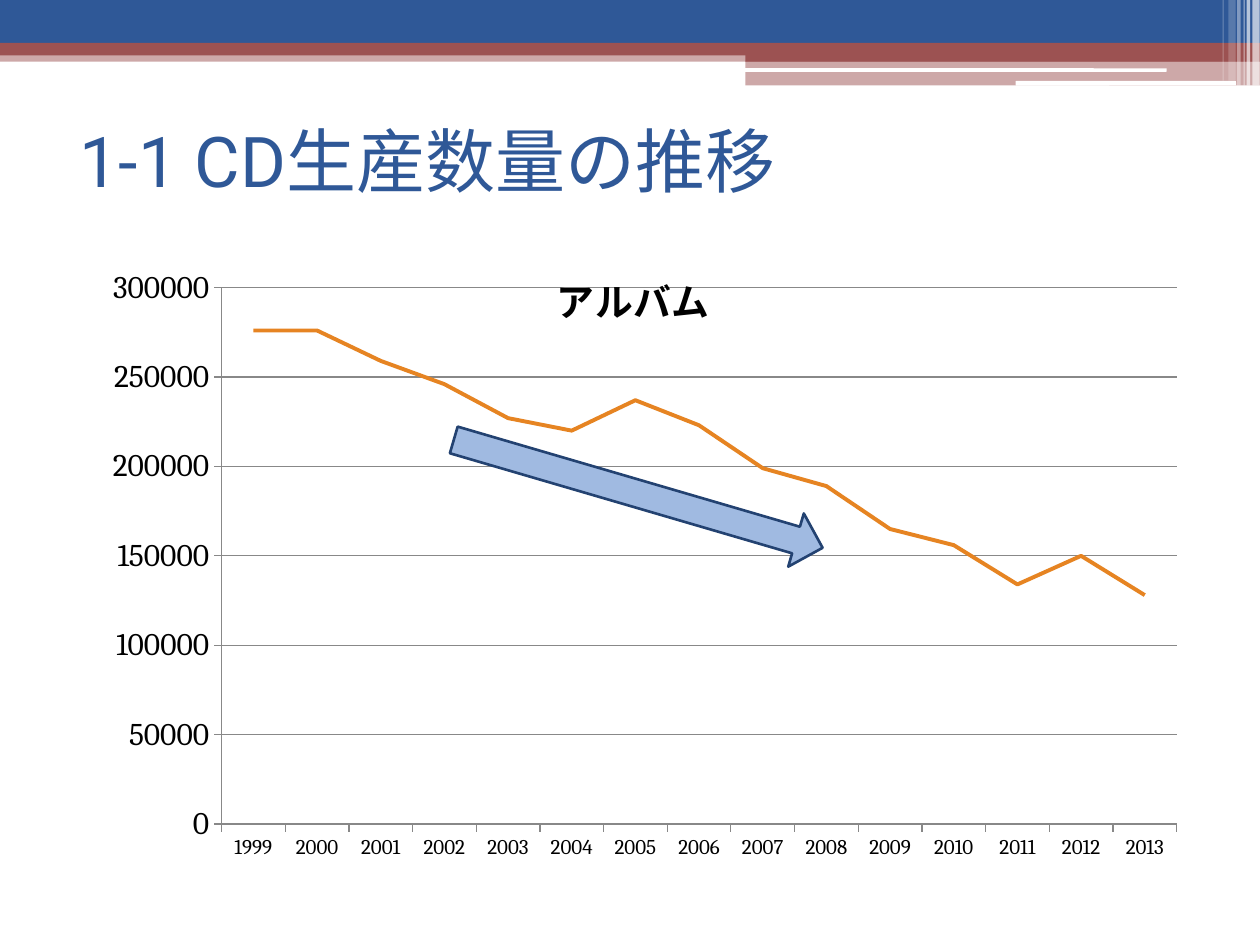
from lxml.etree import SubElement
from pptx import Presentation
from pptx.chart.data import CategoryChartData
from pptx.dml.color import RGBColor
from pptx.enum.chart import XL_CHART_TYPE, XL_MARKER_STYLE, XL_TICK_MARK
from pptx.enum.shapes import MSO_SHAPE
from pptx.enum.text import MSO_ANCHOR, PP_ALIGN
from pptx.oxml import parse_xml
from pptx.oxml.ns import nsdecls, qn
from pptx.util import Pt

BLUE = RGBColor(0x2F, 0x58, 0x97)
RED = RGBColor(0x9C, 0x52, 0x52)
WHITE = RGBColor(0xFF, 0xFF, 0xFF)
BLACK = RGBColor(0x00, 0x00, 0x00)
GRAY = RGBColor(0x88, 0x88, 0x88)
ORANGE = RGBColor(0xE6, 0x84, 0x22)
LIGHT_BLUE = RGBColor(0xA0, 0xBA, 0xE1)
NAVY = RGBColor(0x23, 0x42, 0x71)

BANDS = [
    (0, 28.8, 720, 6.5, RED, 50),
    (0, 0, 720, 24.5, BLUE, 100),
    (0, 24.5, 720, 7.2, RED, 100),
    (426, 28, 294, 7.2, RED, 100),
    (426, 34.6, 294, 14.2, RED, 50),
]
PILLS = [(425.5, 39, 241.2, 2), (580.3, 46.3, 126, 2.6)]
STRIPES = [
    (715.7, 4.2, 48.9, 65),
    (712.4, 2, 48.9, 65),
    (710.6, 0.7, 48.9, 60),
    (707, 2, 48.9, 40),
    (702, 4.2, 46.1, 20),
    (698.6, 0.7, 46.1, 30),
]
YEARS = [str(year) for year in range(1999, 2014)]
ALBUMS = [276000, 276000, 259000, 246000, 227000, 220000, 237000, 223000,
          199000, 189000, 165000, 156000, 134000, 150000, 128000]


class Deck:
    """Hold the style and the current slide, with a method for each element."""

    title_font = "Roboto"
    chart_font = "Cambria"

    def __init__(self, prs):
        self.s = prs.slides.add_slide(prs.slide_layouts[5])

    def shape(self, kind, x, y, w, h, color, alpha=100):
        sp = self.s.shapes.add_shape(kind, Pt(x), Pt(y), Pt(w), Pt(h))
        sp.shadow.inherit = False
        sp.fill.solid()
        sp.fill.fore_color.rgb = color
        sp.line.fill.background()
        if alpha < 100:
            clr = sp.fill._xPr.find(f".//{qn('a:srgbClr')}")
            SubElement(clr, qn("a:alpha"), val=str(alpha * 1000))
        return sp

    def title(self, text, x, y, w, h):
        sp = self.s.shapes.title
        sp.left, sp.top, sp.width, sp.height = Pt(x), Pt(y), Pt(w), Pt(h)
        tf = sp.text_frame
        tf.text = text
        tf.word_wrap = True
        tf.vertical_anchor = MSO_ANCHOR.MIDDLE
        p = tf.paragraphs[0]
        p.alignment = PP_ALIGN.LEFT
        font = p.runs[0].font
        font.name, font.size = self.title_font, Pt(40)
        font.color.rgb = BLUE

    def arrow(self, x, y, w, h, rotation):
        sp = self.shape(MSO_SHAPE.RIGHT_ARROW, x, y, w, h, LIGHT_BLUE)
        sp.line.color.rgb = NAVY
        sp.line.width = Pt(1.5)
        sp.rotation = rotation

    def line_chart(self, name, cats, vals, x, y, w, h, plot):
        data = CategoryChartData()
        data.categories = cats
        data.add_series(name, vals)
        chart = self.s.shapes.add_chart(
            XL_CHART_TYPE.LINE, Pt(x), Pt(y), Pt(w), Pt(h), data).chart
        chart.has_legend = False
        self.chart_text(chart.font, 18)

        chart.has_title = True
        tf = chart.chart_title.text_frame
        tf.text = name
        font = tf.paragraphs[0].runs[0].font
        self.chart_text(font, 21.6)
        font.bold = True
        chart.chart_title._element.find(qn("c:overlay")).set("val", "1")

        chart.plots[0].vary_by_categories = False
        series = chart.plots[0].series[0]
        series.smooth = False
        series.marker.style = XL_MARKER_STYLE.NONE
        series.format.line.color.rgb = ORANGE
        series.format.line.width = Pt(2.25)

        for axis, size in ((chart.category_axis, 12), (chart.value_axis, 18)):
            axis.major_tick_mark = XL_TICK_MARK.OUTSIDE
            axis.minor_tick_mark = XL_TICK_MARK.NONE
            axis.format.line.color.rgb = GRAY
            self.chart_text(axis.tick_labels.font, size)
        axis = chart.value_axis
        axis.minimum_scale, axis.maximum_scale = 0, 300000
        axis.major_unit = 50000
        axis.has_major_gridlines = True
        axis.major_gridlines.format.line.color.rgb = GRAY
        self.place_plot(chart, plot)

    def chart_text(self, font, size):
        font.name, font.size = self.chart_font, Pt(size)
        font.color.rgb = BLACK

    def place_plot(self, chart, plot):
        area = chart._chartSpace.find(f".//{qn('c:plotArea')}")
        for old in area.findall(qn("c:layout")):
            area.remove(old)
        rows = [("layoutTarget", "inner"), ("xMode", "edge"), ("yMode", "edge")]
        rows += zip("xywh", plot)
        body = "".join(f'<c:{tag} val="{val}"/>' for tag, val in rows)
        area.insert(0, parse_xml(
            f"<c:layout {nsdecls('c')}><c:manualLayout>{body}"
            "</c:manualLayout></c:layout>"))


def main():
    prs = Presentation()
    prs.slide_width, prs.slide_height = Pt(720), Pt(540)
    deck = Deck(prs)
    for band in BANDS:
        deck.shape(MSO_SHAPE.RECTANGLE, *band)
    for pill in PILLS:
        deck.shape(MSO_SHAPE.ROUNDED_RECTANGLE, *pill, WHITE)
    for x, w, h, alpha in STRIPES:
        deck.shape(MSO_SHAPE.RECTANGLE, x, 0, w, h, WHITE, alpha)
    deck.title("1-1 CD生産数量の推移", 38.2, 49, 648, 84.2)
    deck.line_chart("アルバム", YEARS, ALBUMS, 39.6, 137.5, 644.4, 362.9,
                    (0.135, 0.074, 0.847, 0.845))
    deck.arrow(254.9, 266.4, 219.6, 31.7, 16.3)
    prs.save("out.pptx")


if __name__ == "__main__":
    main()
